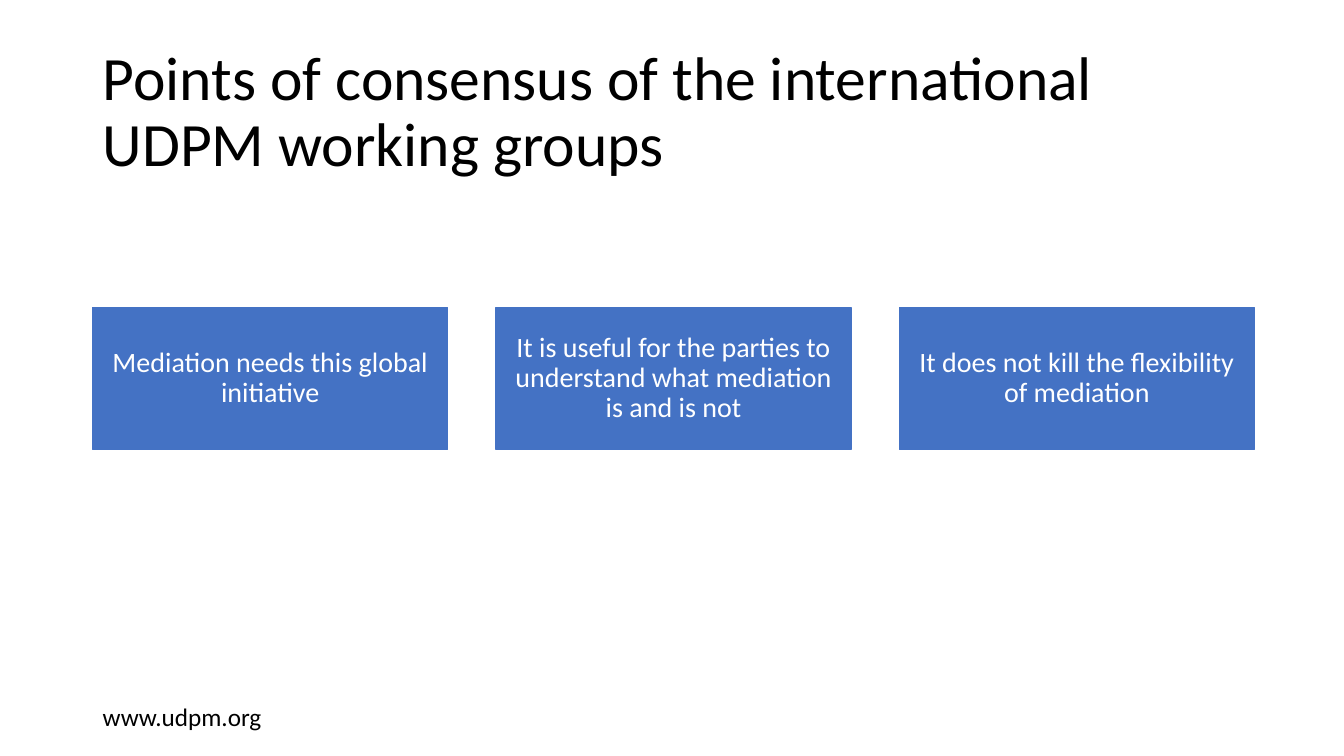
"""Build the slide on the points of consensus of the UDPM working groups."""
from pptx import Presentation, util as u
from pptx.dml.color import RGBColor
from pptx.enum import shapes, text

TITLE = "Points of consensus of the international UDPM working groups"
POINTS = [
    "Mediation needs this global initiative",
    "It is useful for the parties to understand what mediation is and is not",
    "It does not kill the flexibility of mediation",
]
ADDRESS = "www.udpm.org"
FONT, BLACK, WHITE, BLUE = "Calibri", "000000", "FFFFFF", "4472C4"
LEFT, POINT_TOP, POINT_WIDTH, POINT_HEIGHT, POINT_STEP = 0.92, 3.05, 3.52, 1.41, 4


def color(value):
    return RGBColor.from_string(value)


def write(box, words, size, ink=BLACK, align=text.PP_ALIGN.LEFT,
          anchor=text.MSO_ANCHOR.MIDDLE, spacing=0.9, inset=(0.1, 0.05), wrap=True):
    frame = box.text_frame
    frame.word_wrap = wrap
    frame.vertical_anchor = anchor
    frame.margin_left = frame.margin_right = u.Inches(inset[0])
    frame.margin_top = frame.margin_bottom = u.Inches(inset[1])
    para = frame.paragraphs[0]
    para.alignment = align
    para.line_spacing = spacing
    span = para.add_run()
    span.text = words
    span.font.name = FONT
    span.font.size = u.Pt(size)
    span.font.color.rgb = color(ink)


def place(left, top, width, height):
    return [u.Inches(length) for length in (left, top, width, height)]


def main():
    deck = Presentation()
    deck.slide_width, deck.slide_height = u.Inches(13.33), u.Inches(7.5)
    page = deck.slides.add_slide(deck.slide_layouts[6])

    title = page.shapes.add_textbox(*place(LEFT, 0.4, 11.5, 1.45))
    write(title, TITLE, 44)

    for index, point in enumerate(POINTS):
        left = LEFT + index * POINT_STEP
        box = page.shapes.add_shape(
            shapes.MSO_SHAPE.RECTANGLE,
            *place(left, POINT_TOP, POINT_WIDTH, POINT_HEIGHT))
        box.shadow.inherit = False
        box.fill.solid()
        box.fill.fore_color.rgb = color(BLUE)
        box.line.color.rgb = color(BLUE)
        box.line.width = u.Pt(1)
        write(box, point, 20, ink=WHITE, align=text.PP_ALIGN.CENTER, inset=(0.16, 0.09))

    address = page.shapes.add_textbox(*place(LEFT, 6.91, 1.79, 0.4))
    write(address, ADDRESS, 18, anchor=text.MSO_ANCHOR.TOP, spacing=1.0, wrap=False)
    address.text_frame.auto_size = text.MSO_AUTO_SIZE.SHAPE_TO_FIT_TEXT

    deck.save("out.pptx")


if __name__ == "__main__":
    main()
